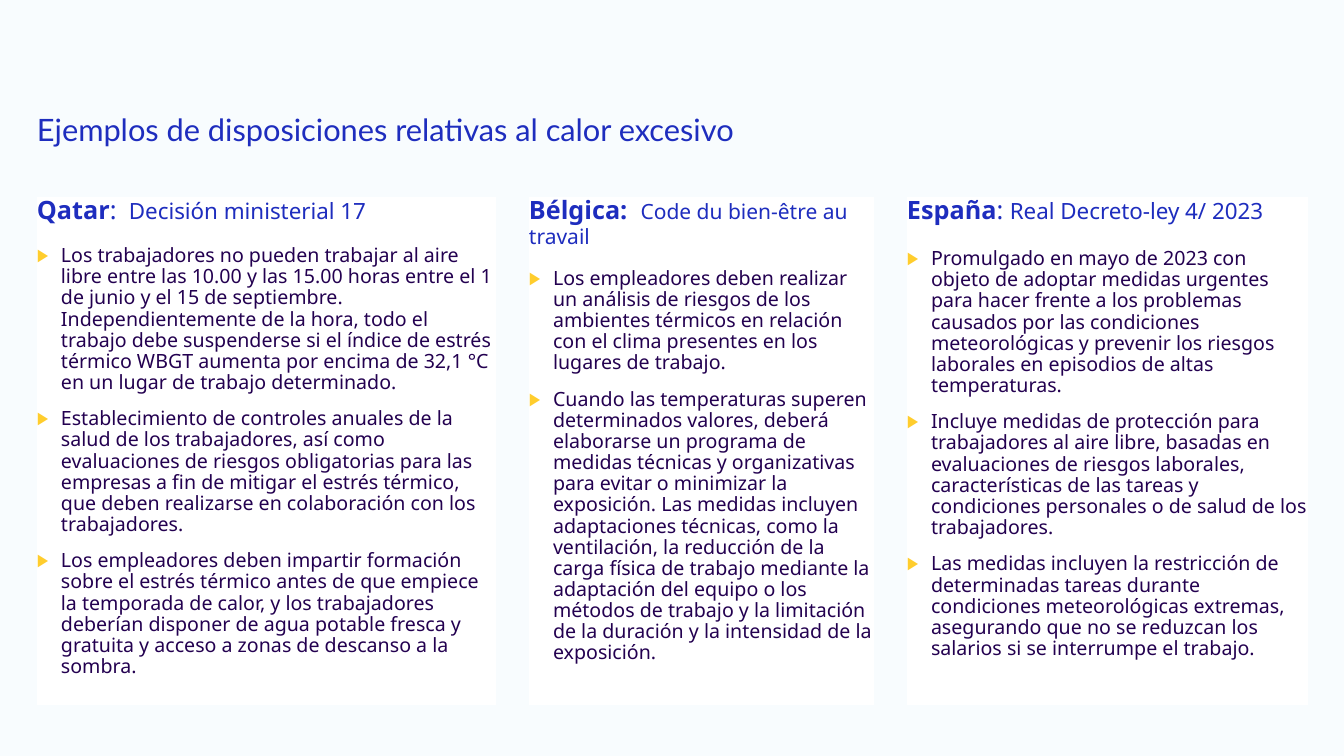
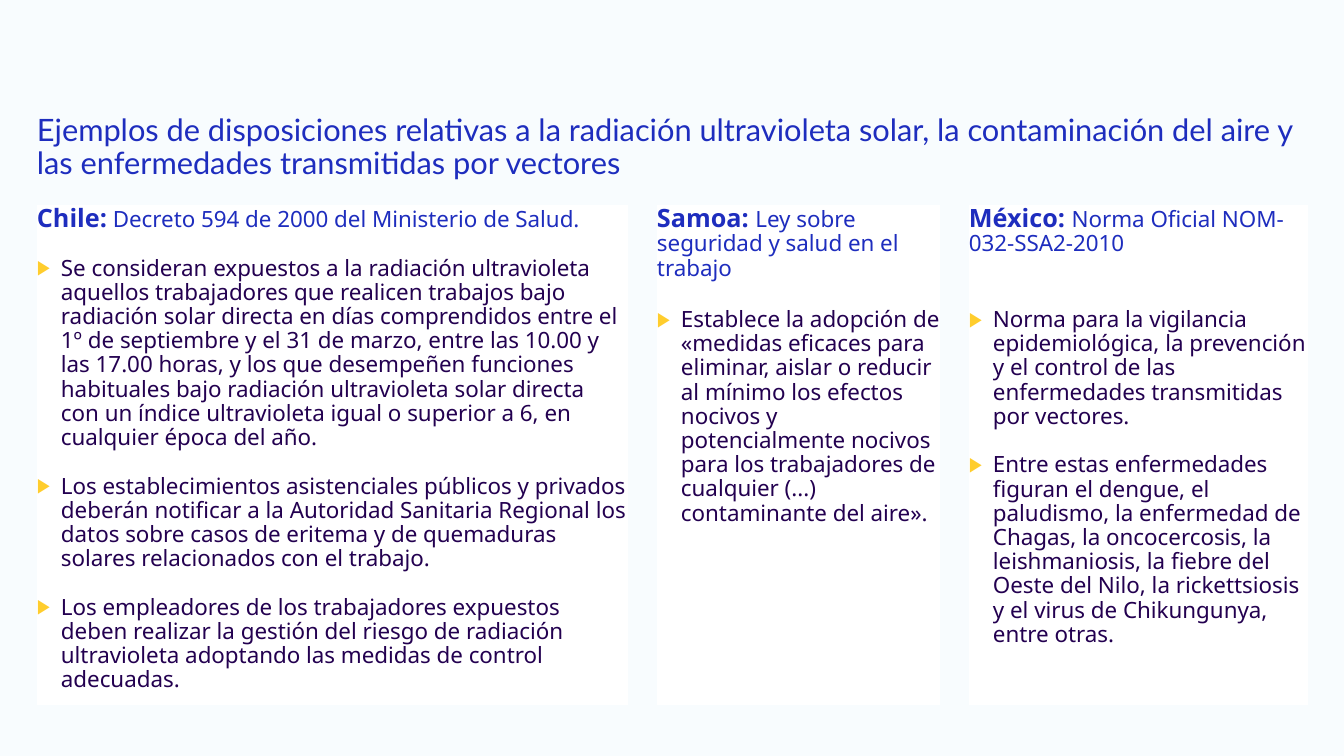
from dataclasses import dataclass

from lxml.etree import SubElement
from pptx import Presentation
from pptx.dml.color import RGBColor
from pptx.enum.shapes import MSO_SHAPE
from pptx.enum.text import MSO_ANCHOR, PP_ALIGN
from pptx.oxml.ns import qn
from pptx.util import Emu, Pt


@dataclass(frozen=True)
class Theme:
    background: str = "F8FCFE"
    panel: str = "FFFFFF"
    blue: str = "1E2DBE"
    purple: str = "230050"
    yellow: str = "FFCD2D"
    title_font: str = "Lato"
    body_font: str = "Noto Sans"
    title_size: int = 22
    country_size: int = 18
    law_size: int = 16
    line_factor: float = 1.08


@dataclass(frozen=True)
class Column:
    width: int
    heading: tuple
    first_gap: int
    bullets: tuple


@dataclass(frozen=True)
class SlideContent:
    title: str
    top: int
    gutter: int
    bullet_size: int
    bullet_gap: int
    columns: tuple


THEME = Theme()
SLIDE_WIDTH, SLIDE_HEIGHT = 1344, 756
MARGIN_LEFT, PANEL_BOTTOM = 37, 705
TITLE_BOX = (37, 115, 1271, 51)
HEADING_INSET = 3
BULLET_INDENT = 24


def px(length):
    return Emu(round(length * 914400 / 100.8))


def leading(size):
    return Pt(round(size * THEME.line_factor, 1))


def format_run(run, font_name, size, color, bold=False):
    run.font.name = font_name
    run.font.size = Pt(size)
    run.font.bold = bold
    run.font.color.rgb = RGBColor.from_string(color)


def prepare_frame(text_frame, inset_top=0):
    text_frame.word_wrap = True
    text_frame.vertical_anchor = MSO_ANCHOR.TOP
    text_frame.margin_left = text_frame.margin_right = 0
    text_frame.margin_top = px(inset_top)
    text_frame.margin_bottom = 0


def add_title(slide, box, text):
    shape = slide.shapes.add_textbox(*map(px, box))
    prepare_frame(shape.text_frame)
    shape.text_frame.text = text
    paragraph = shape.text_frame.paragraphs[0]
    paragraph.line_spacing = 0.9
    format_run(paragraph.runs[0], THEME.title_font, THEME.title_size, THEME.blue)


def set_bullet(paragraph):
    properties = paragraph._p.get_or_add_pPr()
    properties.set("marL", str(px(BULLET_INDENT)))
    properties.set("indent", str(-px(BULLET_INDENT)))
    color = SubElement(properties, qn("a:buClr"))
    SubElement(color, qn("a:srgbClr"), val=THEME.yellow)
    SubElement(properties, qn("a:buSzPct"), val="90000")
    SubElement(properties, qn("a:buFont"), typeface=THEME.body_font)
    SubElement(properties, qn("a:buChar"), char="▶")


def add_heading(paragraph, parts):
    paragraph.alignment = PP_ALIGN.LEFT
    paragraph.line_spacing = leading(THEME.law_size)
    for text, size, bold in parts:
        run = paragraph.add_run()
        run.text = text
        format_run(run, THEME.body_font, size, THEME.blue, bold)


def add_bullet(text_frame, text, size, gap):
    paragraph = text_frame.add_paragraph()
    paragraph.text = text
    paragraph.level = 1
    paragraph.alignment = PP_ALIGN.LEFT
    paragraph.line_spacing = leading(size)
    paragraph.space_before = leading(gap)
    set_bullet(paragraph)
    format_run(paragraph.runs[0], THEME.body_font, size, THEME.purple)


def add_panel(slide, box, column, bullet_size, bullet_gap):
    shape = slide.shapes.add_shape(MSO_SHAPE.RECTANGLE, *map(px, box))
    shape.shadow.inherit = False
    shape.fill.solid()
    shape.fill.fore_color.rgb = RGBColor.from_string(THEME.panel)
    shape.line.fill.background()
    text_frame = shape.text_frame
    prepare_frame(text_frame, HEADING_INSET)
    add_heading(text_frame.paragraphs[0], column.heading)
    for index, text in enumerate(column.bullets):
        gap = bullet_gap if index else column.first_gap
        add_bullet(text_frame, text, bullet_size, gap)


def add_examples_slide(presentation, content):
    slide = presentation.slides.add_slide(presentation.slide_layouts[6])
    slide.background.fill.solid()
    slide.background.fill.fore_color.rgb = RGBColor.from_string(THEME.background)
    add_title(slide, TITLE_BOX, content.title)
    left = MARGIN_LEFT
    for column in content.columns:
        box = (left, content.top, column.width, PANEL_BOTTOM - content.top)
        add_panel(slide, box, column, content.bullet_size, content.bullet_gap)
        left += column.width + content.gutter


def heading(country, law, law_size=THEME.law_size):
    return ((country, THEME.country_size, True), (law, law_size, False))


def heading_plain_colon(country, law):
    name, details = heading(country, law)
    return (name, (": ", THEME.country_size, False), details)


HEAT = SlideContent(
    title="Ejemplos de disposiciones relativas al calor excesivo",
    top=197,
    gutter=33,
    bullet_size=14,
    bullet_gap=10,
    columns=(
        Column(459, heading_plain_colon("Qatar", " Decisión ministerial 17"), 14, (
            "Los trabajadores no pueden trabajar al aire libre entre las 10.00 y las 15.00 horas "
            "entre el 1 de junio y el 15 de septiembre. Independientemente de la hora, todo el "
            "trabajo debe suspenderse si el índice de estrés térmico WBGT aumenta por encima de "
            "32,1 °C en un lugar de trabajo determinado.",
            "Establecimiento de controles anuales de la salud de los trabajadores, así como "
            "evaluaciones de riesgos obligatorias para las empresas a fin de mitigar el estrés "
            "térmico, que deben realizarse en colaboración con los trabajadores.",
            "Los empleadores deben impartir formación sobre el estrés térmico antes de que "
            "empiece la temporada de calor, y los trabajadores deberían disponer de agua potable "
            "fresca y gratuita y acceso a zonas de descanso a la sombra.",
        )),
        Column(345, heading("Bélgica:  ", "Code du bien-être au travail", 15), 13, (
            "Los empleadores deben realizar un análisis de riesgos de los ambientes térmicos en "
            "relación con el clima presentes en los lugares de trabajo.",
            "Cuando las temperaturas superen determinados valores, deberá elaborarse un programa "
            "de medidas técnicas y organizativas para evitar o minimizar la exposición. Las "
            "medidas incluyen adaptaciones técnicas, como la ventilación, la reducción de la "
            "carga física de trabajo mediante la adaptación del equipo o los métodos de trabajo "
            "y la limitación de la duración y la intensidad de la exposición.",
        )),
        Column(401, heading_plain_colon("España", "Real Decreto-ley 4/ 2023"), 16, (
            "Promulgado en mayo de 2023 con objeto de adoptar medidas urgentes para hacer frente "
            "a los problemas causados por las condiciones meteorológicas y prevenir los riesgos "
            "laborales en episodios de altas temperaturas.",
            "Incluye medidas de protección para trabajadores al aire libre, basadas en "
            "evaluaciones de riesgos laborales, características de las tareas y condiciones "
            "personales o de salud de los trabajadores.",
            "Las medidas incluyen la restricción de determinadas tareas durante condiciones "
            "meteorológicas extremas, asegurando que no se reduzcan los salarios si se "
            "interrumpe el trabajo.",
        )),
    ),
)

OTHER_RISKS = SlideContent(
    title="Ejemplos de disposiciones relativas a la radiación ultravioleta solar, "
    "la contaminación del aire y las enfermedades transmitidas por vectores",
    top=205,
    gutter=29,
    bullet_size=16,
    bullet_gap=16,
    columns=(
        Column(591, heading("Chile:", " Decreto 594 de 2000 del Ministerio de Salud."), 16, (
            "Se consideran expuestos a la radiación ultravioleta aquellos trabajadores que "
            "realicen trabajos bajo radiación solar directa en días comprendidos entre el 1º de "
            "septiembre y el 31 de marzo, entre las 10.00 y las 17.00 horas, y los que "
            "desempeñen funciones habituales bajo radiación ultravioleta solar directa con un "
            "índice ultravioleta igual o superior a 6, en cualquier época del año.",
            "Los establecimientos asistenciales públicos y privados deberán notificar a la "
            "Autoridad Sanitaria Regional los datos sobre casos de eritema y de quemaduras "
            "solares relacionados con el trabajo.",
            "Los empleadores de los trabajadores expuestos deben realizar la gestión del riesgo "
            "de radiación ultravioleta adoptando las medidas de control adecuadas.",
        )),
        Column(283, heading("Samoa: ", "Ley sobre seguridad y salud en el trabajo"), 18, (
            "Establece la adopción de «medidas eficaces para eliminar, aislar o reducir al "
            "mínimo los efectos nocivos y potencialmente nocivos para los trabajadores de "
            "cualquier (...) contaminante del aire».",
        )),
        Column(339, heading("México: ", "Norma Oficial NOM- 032-SSA2-2010"), 34, (
            "Norma para la vigilancia epidemiológica, la prevención y el control de las "
            "enfermedades transmitidas por vectores.",
            "Entre estas enfermedades figuran el dengue, el paludismo, la enfermedad de Chagas, "
            "la oncocercosis, la leishmaniosis, la fiebre del Oeste del Nilo, la rickettsiosis "
            "y el virus de Chikungunya, entre otras.",
        )),
    ),
)


def main():
    presentation = Presentation()
    presentation.slide_width = px(SLIDE_WIDTH)
    presentation.slide_height = px(SLIDE_HEIGHT)
    for content in (HEAT, OTHER_RISKS):
        add_examples_slide(presentation, content)
    presentation.save("out.pptx")


if __name__ == "__main__":
    main()
